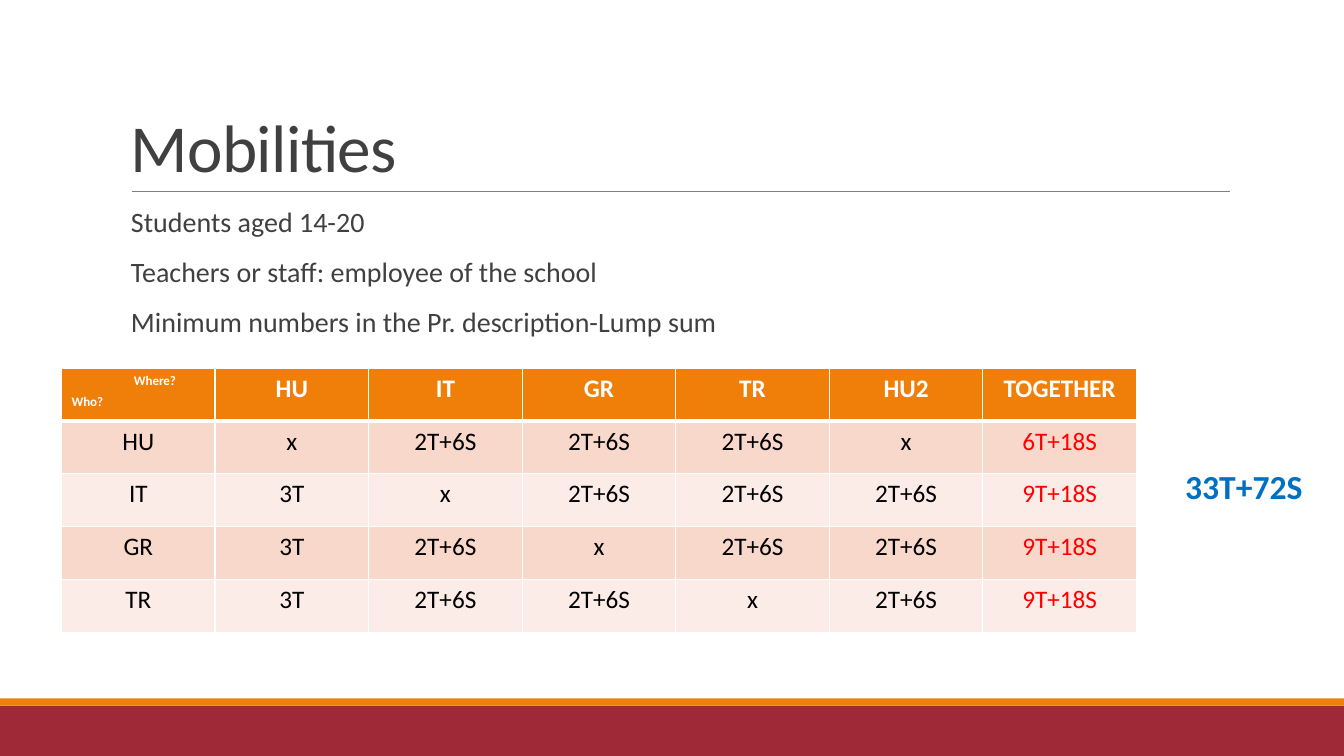
from lxml.etree import SubElement
from pptx import Presentation
from pptx.dml.color import RGBColor
from pptx.enum.shapes import MSO_CONNECTOR, MSO_SHAPE
from pptx.enum.text import MSO_ANCHOR, PP_ALIGN
from pptx.oxml.ns import qn
from pptx.util import Cm, Pt

WHITE = RGBColor(0xFF, 0xFF, 0xFF)
BLACK = RGBColor(0, 0, 0)
CHARCOAL = RGBColor(0x40, 0x40, 0x40)
GRAY = RGBColor(0x80, 0x80, 0x80)
CRIMSON = RGBColor(0x9F, 0x29, 0x36)
ORANGE = RGBColor(0xF0, 0x7F, 0x09)
PINK = RGBColor(0xF9, 0xD8, 0xCC)
PALE_PINK = RGBColor(0xFC, 0xEC, 0xE7)
RED = RGBColor(0xFF, 0, 0)
BLUE = RGBColor(0, 0x70, 0xC0)


def add_run(paragraph, text, color, **font_values):
    run = paragraph.add_run()
    run.text = text
    run.font.color.rgb = color
    for name, value in {"name": "Calibri", "bold": False, **font_values}.items():
        setattr(run.font, name, value)
    return run


def add_text_frame(left, top, width, height, **frame_values):
    frame = slide.shapes.add_textbox(Cm(left), Cm(top), Cm(width), Cm(height)).text_frame
    for name, value in {"word_wrap": True, **frame_values}.items():
        setattr(frame, name, value)
    return frame


presentation = Presentation()
presentation.slide_width, presentation.slide_height = Cm(33.87), Cm(19.05)
slide = presentation.slides.add_slide(presentation.slide_layouts[6])

# Footer bands
for top, height, color in [(17.78, 1.27, CRIMSON), (17.6, 0.18, ORANGE)]:
    band = slide.shapes.add_shape(MSO_SHAPE.RECTANGLE, 0, Cm(top), Cm(33.87), Cm(height))
    band.shadow.inherit = False
    band.fill.solid()
    band.fill.fore_color.rgb = color
    band.line.fill.background()

# Title and the rule below it
title = add_text_frame(3.05, 0.79, 27.94, 4.03, vertical_anchor=MSO_ANCHOR.BOTTOM)
title.paragraphs[0].line_spacing = 0.85
title_run = add_run(title.paragraphs[0], "Mobilities", CHARCOAL, size=Pt(48))
title_run.font._element.set("spc", "-50")

title_rule = slide.shapes.add_connector(
    MSO_CONNECTOR.STRAIGHT, Cm(3.32), Cm(4.82), Cm(31), Cm(4.82))
title_rule.line.color.rgb = GRAY
title_rule.line.width = Pt(0.5)
SubElement(title_rule._element.spPr, qn("a:effectLst"))

# Participation rules
participation = add_text_frame(3.05, 5.13, 27.94, 11.18, margin_left=0, margin_right=0)
participation_rules = [
    "Students aged 14-20",
    "Teachers or staff: employee of the school",
    "Minimum numbers in the Pr. description-Lump sum",
]
for index, rule_text in enumerate(participation_rules):
    paragraph = participation.add_paragraph() if index else participation.paragraphs[0]
    paragraph.line_spacing = 0.9
    paragraph.space_before = Pt(12 if index else 0)
    paragraph.space_after = Pt(2)
    paragraph._p.get_or_add_pPr().set("marL", str(Cm(0.25)))
    add_run(paragraph, rule_text, CHARCOAL, size=Pt(20))

# Mobility table: who travels where
mobilities = [
    ["", "HU", "IT", "GR", "TR", "HU2", "TOGETHER"],
    ["HU", "x", "2T+6S", "2T+6S", "2T+6S", "x", "6T+18S"],
    ["IT", "3T", "x", "2T+6S", "2T+6S", "2T+6S", "9T+18S"],
    ["GR", "3T", "2T+6S", "x", "2T+6S", "2T+6S", "9T+18S"],
    ["TR", "3T", "2T+6S", "2T+6S", "x", "2T+6S", "9T+18S"],
]
row_count, column_count = len(mobilities), len(mobilities[0])
table = slide.shapes.add_table(
    row_count, column_count, Cm(1.55), Cm(9.28),
    Cm(3.87 * column_count), Cm(1.33 * row_count)).table
for column in table.columns:
    column.width = Cm(3.87)
for row in table.rows:
    row.height = Cm(1.33)

for row_index, row_values in enumerate(mobilities):
    is_header = row_index == 0
    row_fill = ORANGE if is_header else (PALE_PINK, PINK)[row_index % 2]
    for column_index, value in enumerate(row_values):
        cell = table.cell(row_index, column_index)
        cell_properties = cell._tc.get_or_add_tcPr()
        bottom_width = 3 if is_header else 1
        top_width = 3 if row_index == 1 else 1
        for side, width in {"L": 1, "R": 1, "T": top_width, "B": bottom_width}.items():
            border = SubElement(cell_properties, qn(f"a:ln{side}"), w=str(Pt(width)))
            border_fill = SubElement(border, qn("a:solidFill"))
            SubElement(border_fill, qn("a:srgbClr"), val=str(WHITE))
        cell.fill.solid()
        cell.fill.fore_color.rgb = row_fill
        if value:
            is_total = column_index == column_count - 1
            color = WHITE if is_header else RED if is_total else BLACK
            paragraph = cell.text_frame.paragraphs[0]
            paragraph.alignment = PP_ALIGN.CENTER
            add_run(paragraph, value, color, size=Pt(18), bold=is_header)

# Corner cell with lowered and raised labels
corner = table.cell(0, 0).text_frame.paragraphs[0]
tab_stops = SubElement(corner._p.get_or_add_pPr(), qn("a:tabLst"))
SubElement(tab_stops, qn("a:tab"), pos=str(Cm(1.57)), algn="l")
for label, baseline in [("Who?\t", -44000), ("Where?", 48000)]:
    label_run = add_run(corner, label, WHITE, size=Pt(16), bold=True)
    label_run.font._element.set("baseline", str(baseline))

# Grand total
grand_total = add_text_frame(29.62, 11.61, 3.51, 1.27, word_wrap=False)
add_run(grand_total.paragraphs[0], "33T+72S", BLUE, size=Pt(24), bold=True)

presentation.save("out.pptx")
